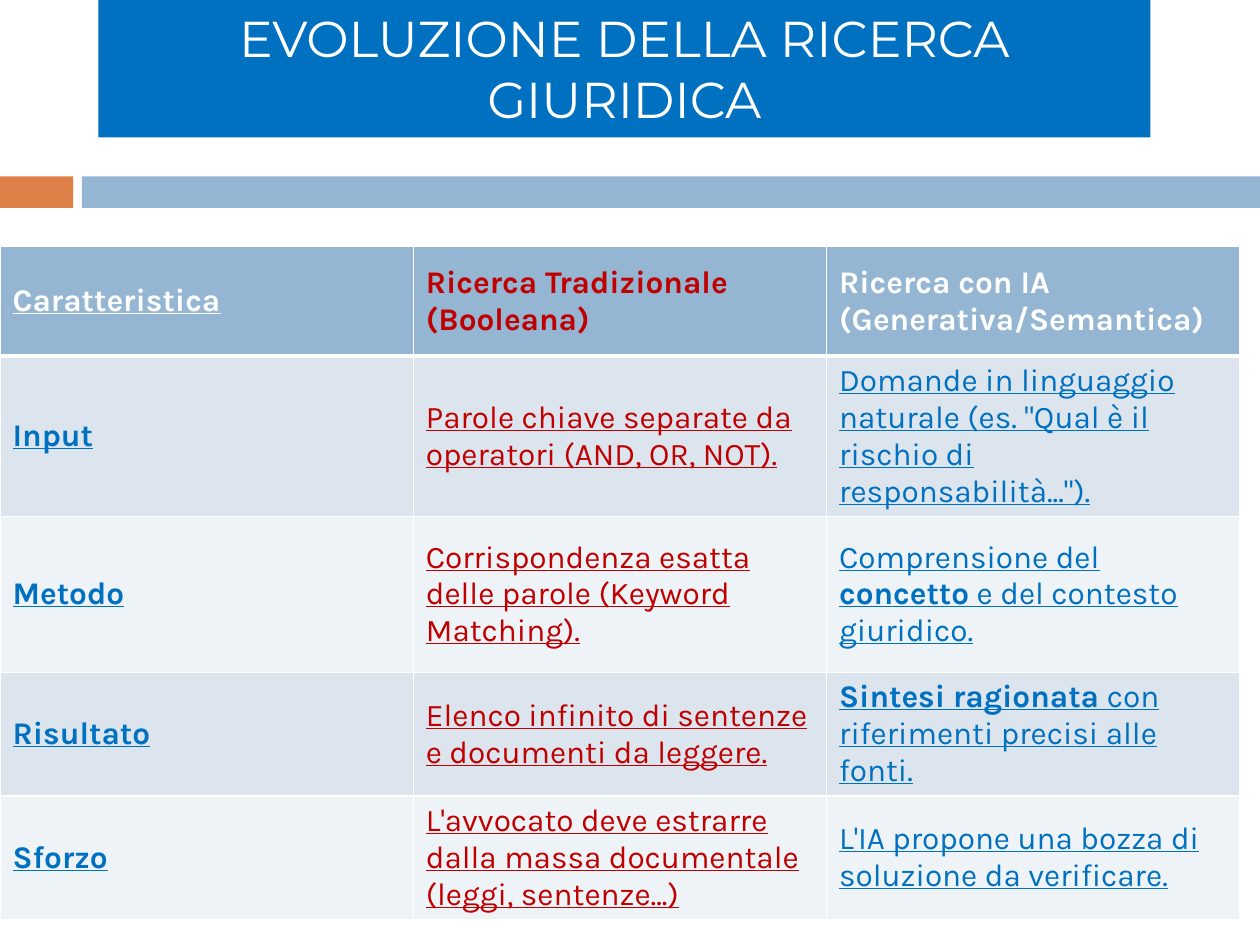
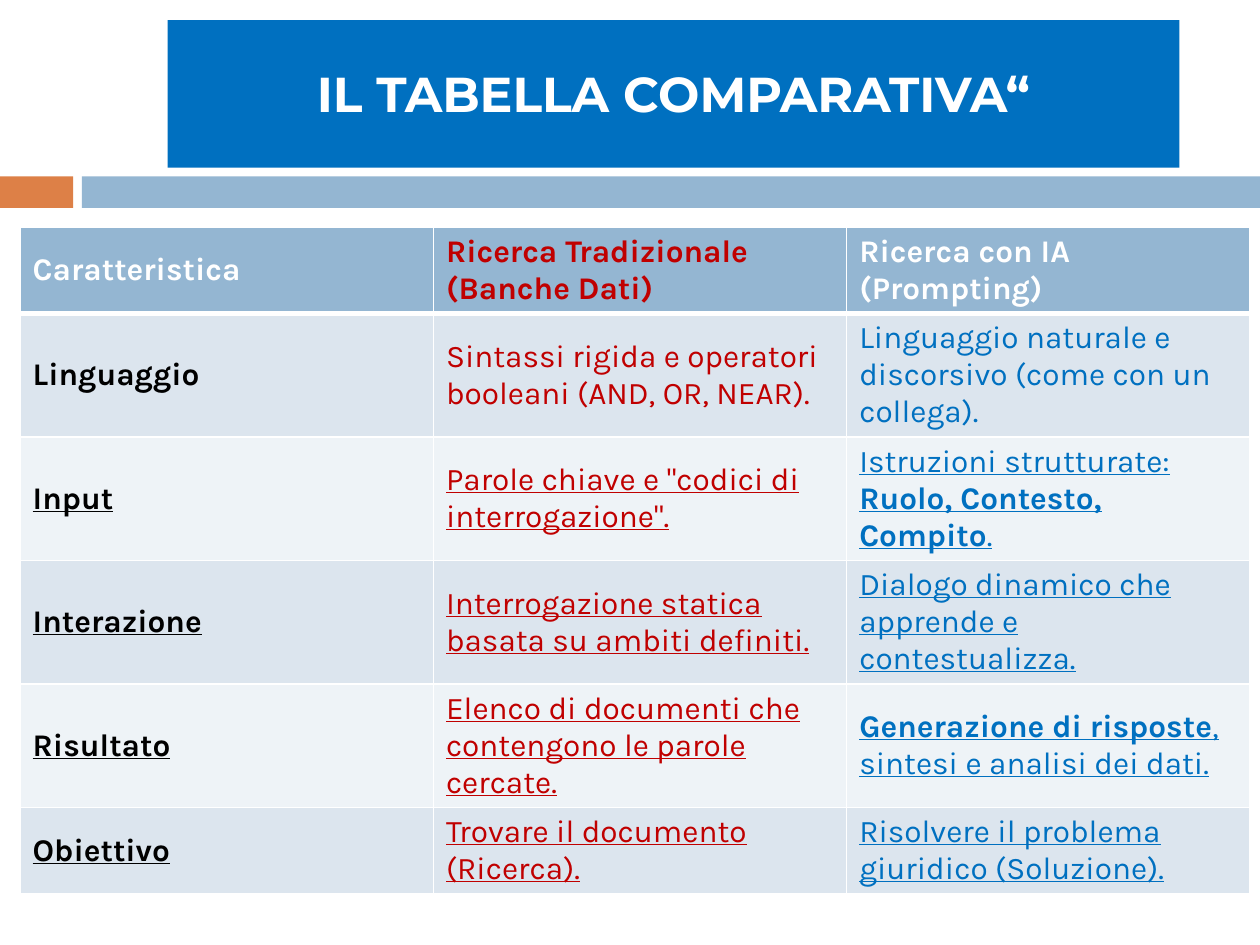
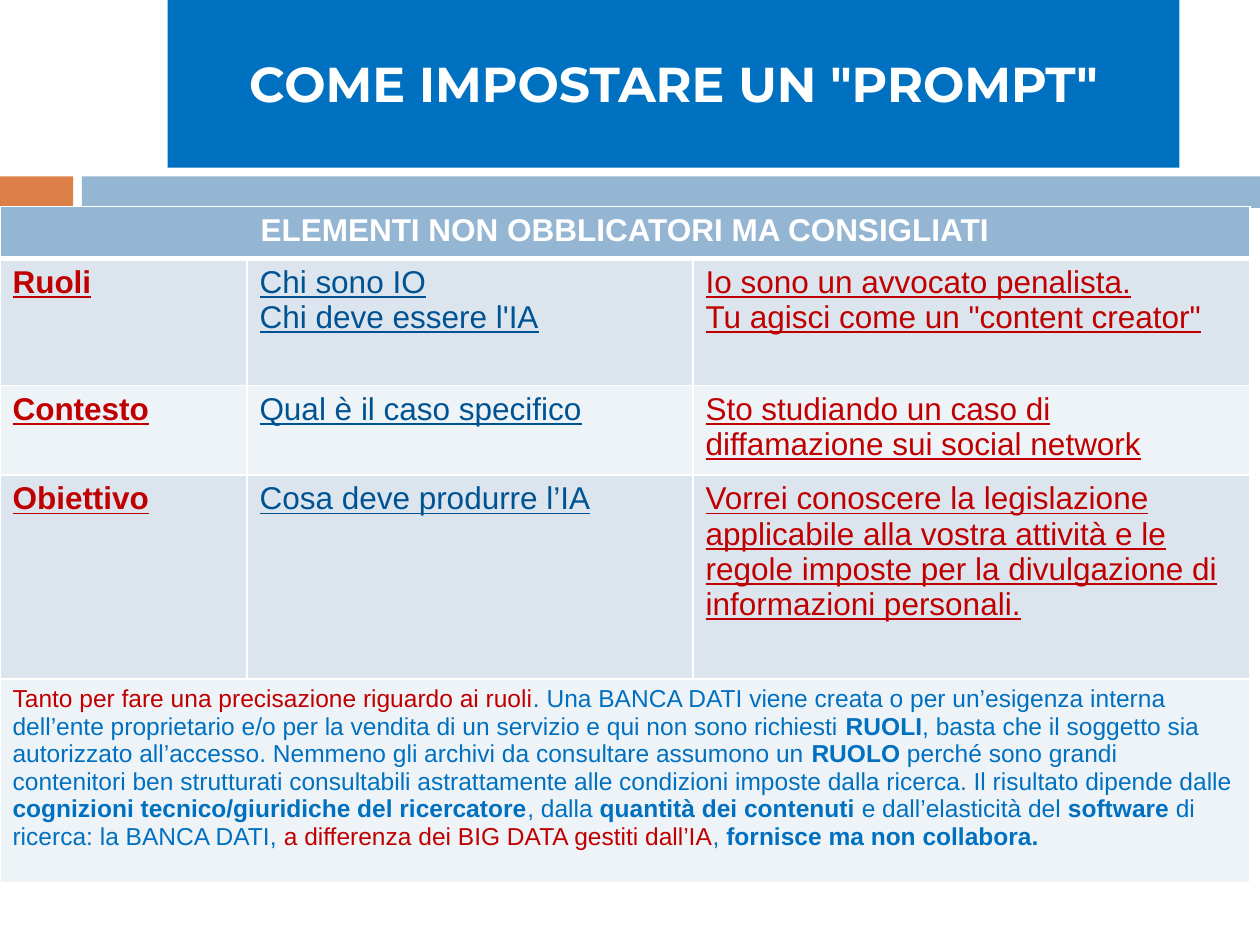
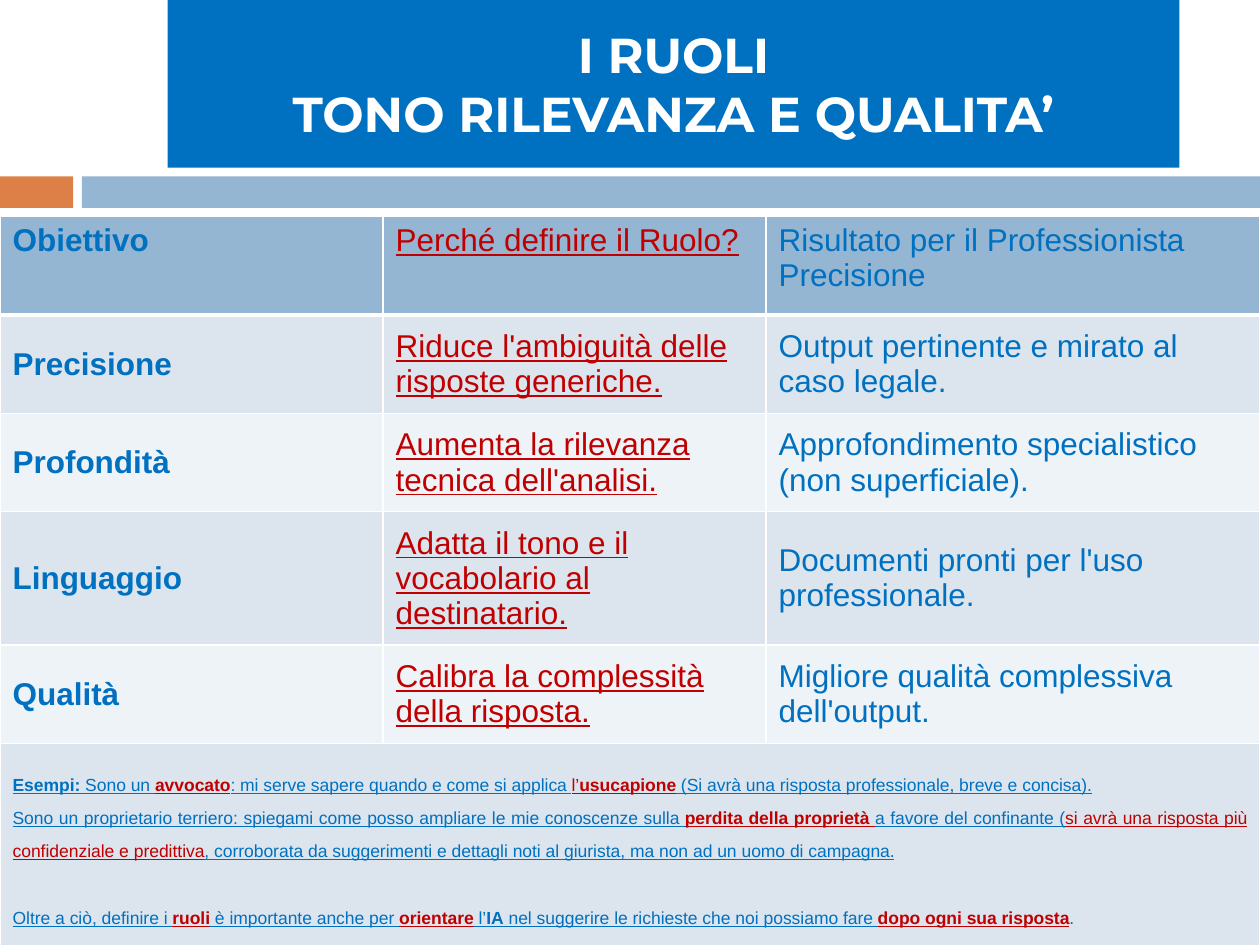
from dataclasses import dataclass, replace
from typing import NamedTuple

from lxml import etree
from pptx import Presentation
from pptx import util as u
from pptx.dml.color import RGBColor
from pptx.enum import shapes, text
from pptx.oxml import ns

SLIDE_WIDTH, SLIDE_HEIGHT = u.Inches(10), u.Inches(7.5)
GRID_COLUMNS, GRID_ROWS = 100, 75

WHITE = RGBColor(0xFF, 0xFF, 0xFF)
BLACK = RGBColor(0, 0, 0)
ORANGE = RGBColor(0xDD, 0x80, 0x47)
PALE_BLUE = RGBColor(0x94, 0xB6, 0xD2)
BLUE = RGBColor(0x00, 0x70, 0xC0)
DARK_BLUE = RGBColor(0x00, 0x53, 0x92)
RED = RGBColor(0xC0, 0x00, 0x00)
ROW_FILLS = (RGBColor(0xEE, 0xF3, 0xF7), RGBColor(0xDC, 0xE5, 0xEE))

TITLE_FONT = "Montserrat"
BOLD_MARK, RED_MARK, PLAIN_MARK = "*", "~", "_"


class Box(NamedTuple):
    left: float
    top: float
    width: float
    height: float


class Band(NamedTuple):
    box: Box
    color: RGBColor


class Style(NamedTuple):
    color: RGBColor
    bold: bool = False
    underline: bool = False


@dataclass(frozen=True)
class Row:
    height: float
    texts: tuple[str, ...]
    styles: tuple[Style, ...]
    size: float = 18
    anchor: text.MSO_ANCHOR = text.MSO_ANCHOR.MIDDLE
    alignment: text.PP_ALIGN | None = None
    line_spacing: float | None = None
    last_gap: float = 0


@dataclass(frozen=True)
class Page:
    title: str
    title_box: Box
    table_left: float
    table_top: float
    column_widths: tuple[float, ...]
    font: str
    rows: tuple[Row, ...]
    title_size: float = 28
    title_bold: bool = True


BANDS = (
    Band(Box(0, 14, 5.8, 2.5), ORANGE),
    Band(Box(6.5, 14, 93.5, 2.5), PALE_BLUE),
)
TALL_TITLE = Box(13.3, 0, 80.3, 13.3)

WHITE_BOLD = Style(WHITE, True)
RED_BOLD = Style(RED, True)
RED_LINK = Style(RED, underline=True)
BLUE_LINK = Style(BLUE, underline=True)
DARK_LINK = Style(DARK_BLUE, underline=True)
SEARCH_HEADER = (WHITE_BOLD, RED_BOLD, WHITE_BOLD)
EVOLUTION_BODY = (Style(BLUE, True, True), RED_LINK, BLUE_LINK)
COMPARISON_BODY = (Style(BLACK, True, True), RED_LINK, BLUE_LINK)
PROMPT_BODY = (Style(RED, True, True), DARK_LINK, RED_LINK)
ROLES_BODY = (Style(BLUE, True), RED_LINK, Style(BLUE))
TOP = text.MSO_ANCHOR.TOP

PAGES = (
    Page(
        "EVOLUZIONE DELLA RICERCA GIURIDICA",
        Box(7.8, 0, 83.5, 10.9), 0, 19.55, (32.8, 32.8, 32.8), "Karla",
        (
            Row(8.7, ("Caratteristica", "Ricerca Tradizionale (Booleana)",
                      "Ricerca con IA (Generativa/Semantica)"),
                (Style(WHITE, True, True), RED_BOLD, WHITE_BOLD)),
            Row(12.4, ("Input", "Parole chiave separate da operatori (AND, OR, NOT).",
                       'Domande in linguaggio naturale (es. "Qual è il rischio di responsabilità...").'),
                EVOLUTION_BODY),
            Row(12.4, ("Metodo", "Corrispondenza esatta delle parole (Keyword Matching).",
                       "Comprensione del *concetto* e del contesto giuridico."),
                EVOLUTION_BODY),
            Row(8.7, ("Risultato", "Elenco infinito di sentenze e documenti da leggere.",
                      "*Sintesi ragionata* con riferimenti precisi alle fonti."),
                EVOLUTION_BODY),
            Row(8.7, ("Sforzo",
                      "L'avvocato deve estrarre dalla massa documentale (leggi, sentenze...)",
                      "L'IA propone una bozza di soluzione da verificare."),
                EVOLUTION_BODY),
        ),
        title_size=28.8, title_bold=False,
    ),
    Page(
        "IL TABELLA COMPARATIVA“",
        Box(13.3, 1.6, 80.3, 11.7), 1.6, 18, (32.8, 32.8, 32), "Karla",
        (
            Row(6.8, ("Caratteristica", "Ricerca Tradizionale (Banche Dati)",
                      "Ricerca con IA (Prompting)"), SEARCH_HEADER),
            Row(9.8, ("Linguaggio", "Sintassi rigida e operatori booleani (AND, OR, NEAR).",
                      "Linguaggio naturale e discorsivo (come con un collega)."),
                (Style(BLACK, True), Style(RED), Style(BLUE))),
            Row(9.8, ("Input", 'Parole chiave e "codici di interrogazione".',
                      "Istruzioni strutturate: *Ruolo, Contesto, Compito*."),
                COMPARISON_BODY),
            Row(6.8, ("Interazione", "Interrogazione statica basata su ambiti definiti.",
                      "Dialogo dinamico che apprende e contestualizza."),
                COMPARISON_BODY),
            Row(9.8, ("Risultato", "Elenco di documenti che contengono le parole cercate.",
                      "*Generazione di risposte*, sintesi e analisi dei dati."),
                COMPARISON_BODY),
            Row(6.8, ("Obiettivo", "Trovare il documento (Ricerca).",
                      "Risolvere il problema giuridico (Soluzione)."),
                COMPARISON_BODY),
        ),
    ),
    Page(
        'COME IMPOSTARE UN "PROMPT"',
        TALL_TITLE, 0, 16.4, (19.6, 35.4, 44.2), "Arial",
        (
            Row(4.1, ("ELEMENTI NON OBBLICATORI MA CONSIGLIATI",), (WHITE_BOLD,),
                anchor=TOP, alignment=text.PP_ALIGN.CENTER),
            Row(10.1, ("Ruoli", "Chi sono IO\nChi deve essere l'IA",
                       'Io sono un avvocato penalista.\nTu agisci come un "content creator"'),
                PROMPT_BODY, anchor=TOP),
            Row(7.1, ("Contesto", "Qual è il caso specifico",
                      "Sto studiando un caso di diffamazione sui social network"),
                PROMPT_BODY, anchor=TOP),
            Row(16.2, ("Obiettivo", "Cosa deve produrre l’IA",
                       "Vorrei conoscere la legislazione applicabile alla vostra attività e le "
                       "regole imposte per la divulgazione di informazioni personali."),
                PROMPT_BODY, anchor=TOP),
            Row(16.2, ("~Tanto per fare una precisazione riguardo ai ruoli~. Una BANCA DATI viene "
                       "creata o per un’esigenza interna dell’ente proprietario e/o per la vendita "
                       "di un servizio e qui non sono richiesti *RUOLI*, basta che il soggetto sia "
                       "autorizzato all’accesso. Nemmeno gli archivi da consultare assumono un "
                       "*RUOLO* perché sono grandi contenitori ben strutturati consultabili "
                       "astrattamente alle condizioni imposte dalla ricerca. Il risultato dipende "
                       "dalle *cognizioni tecnico/giuridiche del ricercatore*, dalla *quantità dei "
                       "contenuti *e dall’elasticità del *software* di ricerca: la BANCA DATI, "
                       "~a differenza dei BIG DATA gestiti dall’IA~, *fornisce ma non collabora.*",),
                (Style(BLUE),), size=14, anchor=TOP),
        ),
    ),
    Page(
        "I RUOLI\vTONO RILEVANZA E QUALITA’",
        TALL_TITLE, 0, 17.2, (30.4, 30.4, 39.2), "Arial",
        (
            Row(7.8, ("Obiettivo", "Perché definire il Ruolo?",
                      "Risultato per il Professionista\nPrecisione"),
                ROLES_BODY, anchor=TOP),
            Row(7.8, ("Precisione", "Riduce l'ambiguità delle risposte generiche.",
                      "Output pertinente e mirato al caso legale."), ROLES_BODY),
            Row(7.8, ("Profondità", "Aumenta la rilevanza tecnica dell'analisi.",
                      "Approfondimento specialistico (non superficiale)."), ROLES_BODY),
            Row(10.6, ("Linguaggio", "Adatta il tono e il vocabolario al destinatario.",
                       "Documenti pronti per l'uso professionale."), ROLES_BODY),
            Row(7.8, ("Qualità", "Calibra la complessità della risposta.",
                      "Migliore qualità complessiva dell'output."), ROLES_BODY),
            Row(16.1, ("*Esempi: *Sono un ~*avvocato*~: mi serve sapere quando e come si applica "
                       "~l’*usucapione*~ (Si avrà una risposta professionale, breve e concisa).\n"
                       "Sono un proprietario terriero: spiegami come posso ampliare le mie "
                       "conoscenze sulla ~*perdita della proprietà* ~a favore del confinante "
                       "(~si avrà una risposta più confidenziale e predittiva~, corroborata da "
                       "suggerimenti e dettagli noti al giurista, ma non ad un uomo di campagna.\n"
                       "Oltre a ciò, definire i ~*ruoli*~ è importante anche per ~*orientare*~ "
                       "l’*IA* nel suggerire le richieste che noi possiamo fare "
                       "~*dopo ogni sua risposta*~_._",),
                (BLUE_LINK,), size=10, alignment=text.PP_ALIGN.JUSTIFY,
                line_spacing=1.7, last_gap=19),
        ),
    ),
)


def columns(count: float) -> u.Emu:
    return u.Emu(round(SLIDE_WIDTH * count / GRID_COLUMNS))


def rows(count: float) -> u.Emu:
    return u.Emu(round(SLIDE_HEIGHT * count / GRID_ROWS))


def place(box: Box) -> tuple[u.Emu, u.Emu, u.Emu, u.Emu]:
    return columns(box.left), rows(box.top), columns(box.width), rows(box.height)


def add_bands_to_layout(slide, layout) -> None:
    for band in BANDS:
        shape = slide.shapes.add_shape(shapes.MSO_SHAPE.RECTANGLE, *place(band.box))
        shape.shadow.inherit = False
        shape.fill.solid()
        shape.fill.fore_color.rgb = band.color
        shape.line.fill.background()
        layout.shapes.element.append(shape.element)


def write_title(slide, page: Page) -> None:
    title = slide.shapes.title
    title.left, title.top, title.width, title.height = place(page.title_box)
    title.fill.solid()
    title.fill.fore_color.rgb = BLUE
    frame = title.text_frame
    frame.text = page.title
    frame.word_wrap = True
    frame.auto_size = text.MSO_AUTO_SIZE.NONE
    frame.vertical_anchor = text.MSO_ANCHOR.MIDDLE
    frame.margin_left = frame.margin_right = u.Inches(0.1)
    frame.margin_top, frame.margin_bottom = u.Inches(0.04), u.Inches(0.05)
    paragraph = frame.paragraphs[0]
    paragraph.alignment = text.PP_ALIGN.CENTER
    paragraph.font.name = TITLE_FONT
    paragraph.font.size = u.Pt(page.title_size)
    set_font(paragraph.font, Style(WHITE, page.title_bold))


def set_font(font, style: Style) -> None:
    font.color.rgb = style.color
    font.bold = style.bold
    font.underline = style.underline


def split_pieces(line: str, base: Style) -> list[tuple[str, Style]]:
    pieces, style, piece = [], base, ""
    for character in line:
        if character not in (BOLD_MARK, RED_MARK, PLAIN_MARK):
            piece += character
            continue
        if piece:
            pieces.append((piece, style))
            piece = ""
        if character == BOLD_MARK:
            style = style._replace(bold=not style.bold)
        elif character == RED_MARK:
            style = style._replace(color=base.color if style.color == RED else RED)
        else:
            style = style._replace(underline=not style.underline)
    return pieces + [(piece, style)] if piece else pieces


def write_cell(cell, content: str, style: Style, row: Row, font_name: str) -> None:
    cell.vertical_anchor = row.anchor
    frame = cell.text_frame
    lines = content.split("\n")
    for index, line in enumerate(lines):
        paragraph = frame.add_paragraph() if index else frame.paragraphs[0]
        paragraph.alignment = row.alignment
        paragraph.line_spacing = row.line_spacing
        if row.last_gap and index == len(lines) - 1:
            paragraph.space_before = u.Pt(row.last_gap)
        paragraph.font.name = font_name
        paragraph.font.size = u.Pt(row.size)
        set_font(paragraph.font, style)
        for piece, piece_style in split_pieces(line, style):
            run = paragraph.add_run()
            run.text = piece
            if piece_style != style:
                set_font(run.font, piece_style)


def paint_cell(cell, color: RGBColor, bottom_width: float) -> None:
    cell.fill.solid()
    cell.fill.fore_color.rgb = color
    properties = cell._tc.get_or_add_tcPr()
    for index, side in enumerate("LRTB"):
        width = bottom_width if side == "B" else 1
        line = etree.Element(ns.qn(f"a:ln{side}"), w=str(u.Pt(width)))
        fill = etree.SubElement(line, ns.qn("a:solidFill"))
        etree.SubElement(fill, ns.qn("a:srgbClr"), val=str(WHITE))
        properties.insert(index, line)


def add_comparison_table(slide, page: Page) -> None:
    box = Box(page.table_left, page.table_top, sum(page.column_widths),
              sum(row.height for row in page.rows))
    table = slide.shapes.add_table(
        len(page.rows), len(page.column_widths), *place(box)).table
    table.horz_banding = False
    for column, width in zip(table.columns, page.column_widths):
        column.width = columns(width)
    for index, row in enumerate(page.rows):
        table.rows[index].height = rows(row.height)
        cells = list(table.rows[index].cells)
        for cell in cells:
            paint_cell(cell, ROW_FILLS[index % 2] if index else PALE_BLUE, 1 if index else 3)
        if len(row.texts) == 1:
            cells[0].merge(cells[-1])
        for cell, content, style in zip(cells, row.texts, row.styles):
            write_cell(cell, content, style, row, page.font)


def main() -> None:
    presentation = Presentation()
    presentation.slide_width, presentation.slide_height = SLIDE_WIDTH, SLIDE_HEIGHT
    layout = presentation.slide_layouts.get_by_name("Title Only")
    for index, page in enumerate(PAGES):
        slide = presentation.slides.add_slide(layout)
        if index == 0:
            add_bands_to_layout(slide, layout)
        write_title(slide, page)
        add_comparison_table(slide, page)
    presentation.save("out.pptx")


if __name__ == "__main__":
    main()
